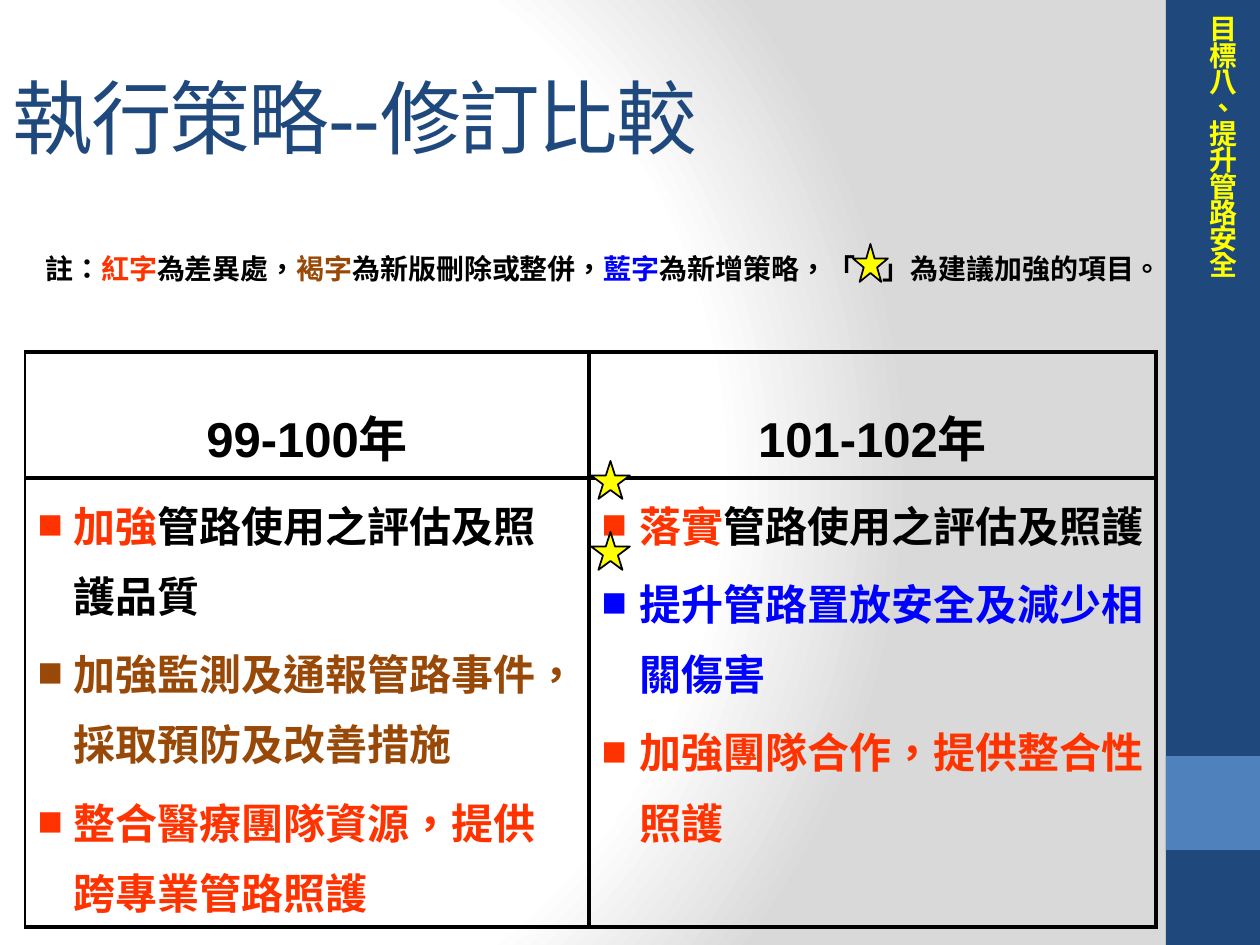
import pptx
import pptx.util
import pptx.oxml
import pptx.oxml.ns
import lxml.etree
from pptx.dml.color import RGBColor
from pptx.enum.shapes import MSO_SHAPE
from pptx.enum.text import MSO_ANCHOR, PP_ALIGN

PX = 914400 // 126
NAVY = RGBColor(0x1F, 0x49, 0x7D)
SKY = RGBColor(0x4F, 0x81, 0xBD)
YELLOW = RGBColor(0xFF, 0xFF, 0x00)
BLACK = RGBColor(0x00, 0x00, 0x00)
RED = RGBColor(0xFF, 0x33, 0x00)
BROWN = RGBColor(0x98, 0x48, 0x07)
BLUE = RGBColor(0x00, 0x00, 0xFF)
WHITE = RGBColor(0xFF, 0xFF, 0xFF)
GRAY = RGBColor(0xD9, 0xD9, 0xD9)

# Content: each run is (text, colour)
TITLE = [("執行策略--修訂比較", NAVY)]
SIDE = [("目標八、提升管路安全", YELLOW)]
NOTE = [("註：", BLACK), ("紅字", RED), ("為差異處，", BLACK), ("褐字", BROWN),
        ("為新版刪除或整併，", BLACK), ("藍字", BLUE),
        ("為新增策略，「　」為建議加強的項目。", BLACK)]
HEADS = ["99-100年", "101-102年"]
ITEMS = [
    [[("加強", RED), ("管路使用之評估及照護品質", BLACK)],
     [("加強監測及通報管路事件，採取預防及改善措施", BROWN)],
     [("整合醫療團隊資源，提供跨專業管路照護", RED)]],
    [[("落實", RED), ("管路使用之評估及照護", BLACK)],
     [("提升管路置放安全及減少相關傷害", BLUE)],
     [("加強團隊合作，提供整合性照護", RED)]],
]

# Layout in px
BARS = [((1166, 0, 94, 945), NAVY), ((1166, 756, 94, 94), SKY)]
COLS, ROWS = (564, 567), (126, 449)
GRID = (25, 352, sum(COLS), sum(ROWS))
INDENT = (36, 38)
EDGE = (13, 8)
STARS = [(591, 532, 39, 38), (591, 461, 39, 38)]
NOTESTAR = (853, 244, 35, 38)

# Text formats
BIG = {"size": 46, "bold": False}
SMALL = {"size": 16, "bold": True}
HEAD = {"size": 28, "bold": True}
BODY = {"size": 24, "bold": True}


def emu(box):
    return [n * PX for n in box]


def sub(node, tag, **attrs):
    child = lxml.etree.SubElement(node, pptx.oxml.ns.qn(tag))
    for key, val in attrs.items():
        child.set(key, str(val))
    return child


def write(para, runs, form, track=None):
    for text, color in runs:
        run = para.add_run()
        run.text = text
        run.font.name = "Arial"
        run.font.color.rgb = color
        for key, val in form.items():
            setattr(run.font, key, pptx.util.Pt(val) if key == "size" else val)
        run.font._element.set("lang", "zh-TW")
        run.font._element.set("altLang", "en-US")
        if track:
            run.font._element.set("spc", str(track))


def label(shapes, box, runs, form, track=None, **frame):
    text = shapes.add_textbox(*emu(box)).text_frame
    for key, val in frame.items():
        setattr(text, key, val)
    write(text.paragraphs[0], runs, form, track)
    return text


def shape(shapes, kind, box, color, line=None):
    part = shapes.add_shape(kind, *emu(box))
    part.shadow.inherit = False
    part.fill.solid()
    part.fill.fore_color.rgb = color
    if line is None:
        part.line.fill.background()
    else:
        part.line.color.rgb = line
        part.line.width = pptx.util.Pt(1)


def star(shapes, box):
    shape(shapes, MSO_SHAPE.STAR_5_POINT, box, YELLOW, BLACK)


def space(para, lines):
    para.line_spacing = lines
    props = para._p.get_or_add_pPr()
    sub(sub(props, "a:spcBef"), "a:spcPct", val=20000)
    return props


def border(cell, col):
    props = cell._tc.get_or_add_tcPr()
    for side in "LRTB":
        width = 1 if side == "L" and col == 0 else 2.25
        line = sub(props, "a:ln" + side, w=int(width * 12700))
        sub(sub(line, "a:solidFill"), "a:srgbClr", val=BLACK)
    cell.fill.background()


def backdrop(slide):
    names = pptx.oxml.ns.nsdecls("p", "a")
    stops = "".join(f'<a:gs pos="{pos}"><a:srgbClr val="{color}"/></a:gs>'
                    for pos, color in [(0, WHITE), (75000, WHITE), (100000, GRAY)])
    slide._element.cSld.insert(0, pptx.oxml.parse_xml(
        f'<p:bg {names}><p:bgPr><a:gradFill rotWithShape="1"><a:gsLst>{stops}</a:gsLst>'
        '<a:path path="circle"><a:fillToRect l="20000" t="50000" r="100000" b="50000"/>'
        '</a:path></a:gradFill><a:effectLst/></p:bgPr></p:bg>'))


def grid(shapes):
    table = shapes.add_table(2, 2, *emu(GRID)).table
    table.first_row = table.horz_banding = False
    for row, high in zip(table.rows, ROWS):
        row.height = high * PX
    for col, wide in enumerate(COLS):
        table.columns[col].width = wide * PX
        head, body = table.cell(0, col), table.cell(1, col)
        for cell in (head, body):
            border(cell, col)
        body.margin_right = EDGE[col] * PX
        para = head.text_frame.paragraphs[0]
        para.alignment = PP_ALIGN.CENTER
        space(para, 1.6)
        write(para, [(HEADS[col], BLACK)], HEAD)
        for num, runs in enumerate(ITEMS[col]):
            text = body.text_frame
            para = text.add_paragraph() if num else text.paragraphs[0]
            props = space(para, 1.15)
            props.set("marL", str(INDENT[col] * PX))
            props.set("indent", str(-INDENT[col] * PX))
            sub(props, "a:buFont", typeface="Arial")
            sub(props, "a:buChar", char="■")
            write(para, runs, BODY)


def main():
    deck = pptx.Presentation()
    deck.slide_width, deck.slide_height = emu((1260, 945))
    slide = deck.slides.add_slide(deck.slide_layouts[6])
    shapes = slide.shapes
    backdrop(slide)

    # Side band with upright heading
    for box, color in BARS:
        shape(shapes, MSO_SHAPE.RECTANGLE, box, color)
    side = label(shapes, (1186, 3, 59, 367), SIDE, SMALL, -100, word_wrap=True)
    side._txBody.bodyPr.set("vert", "eaVert")

    # Title and comparison table
    label(shapes, (0, 37, 1134, 158), TITLE, BIG, -100,
          word_wrap=True, vertical_anchor=MSO_ANCHOR.MIDDLE)
    grid(shapes)

    # Stars and colour key
    star(shapes, STARS[0])
    key = shapes.add_group_shape().shapes
    label(key, (33, 245, 1153, 47), NOTE, SMALL, word_wrap=False)
    star(key, NOTESTAR)
    star(shapes, STARS[1])

    deck.save("out.pptx")


if __name__ == "__main__":
    main()
